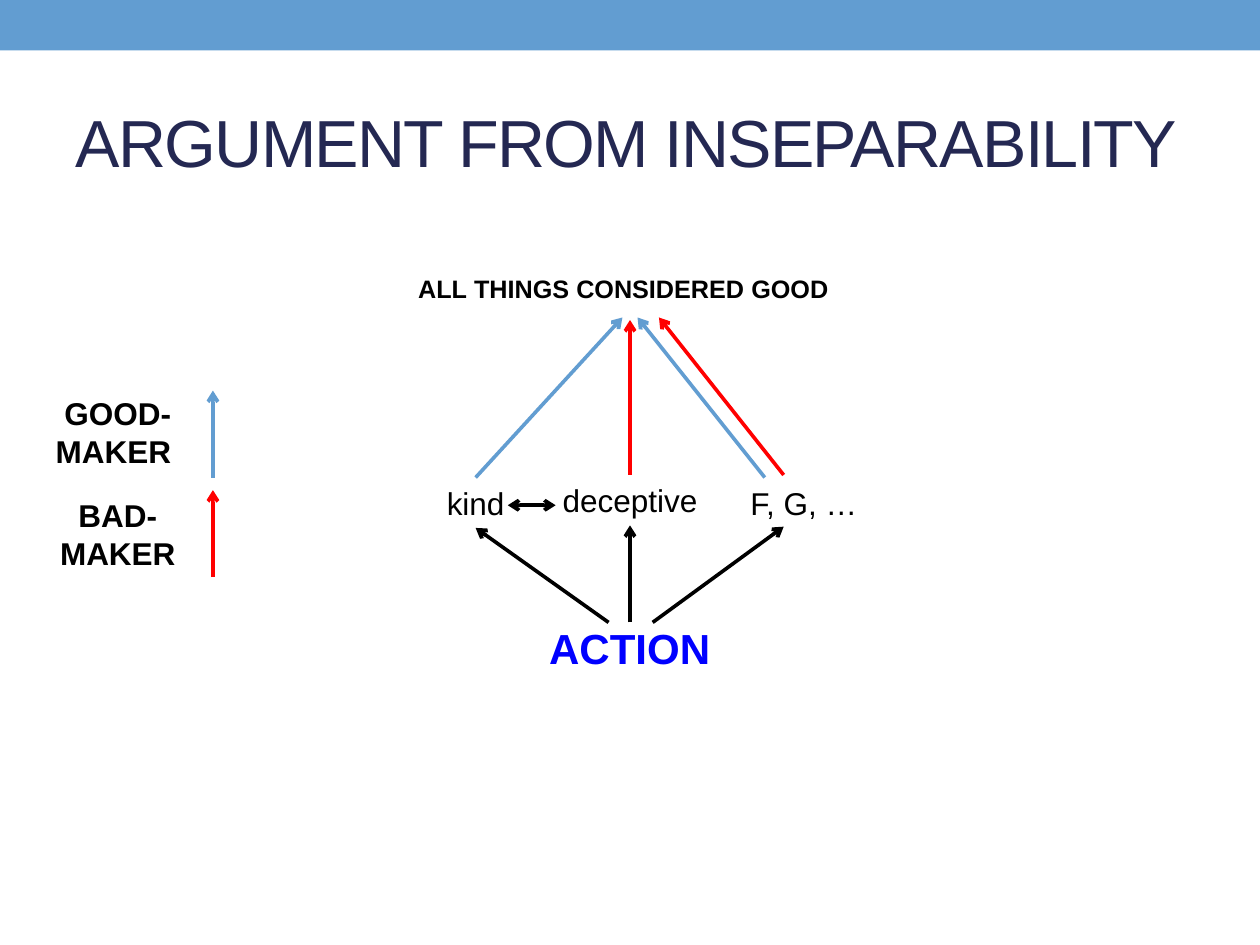
from dataclasses import dataclass
from typing import Optional

from lxml.etree import SubElement
from pptx import Presentation
from pptx.dml.color import RGBColor
from pptx.enum.shapes import MSO_CONNECTOR, MSO_SHAPE
from pptx.enum.text import MSO_ANCHOR, MSO_AUTO_SIZE, PP_ALIGN
from pptx.oxml.ns import qn
from pptx.util import Inches, Pt

# The slide is a grid of 100 columns by 75 rows
COLUMNS, ROWS = 100, 75
WIDTH, HEIGHT = Inches(10), Inches(7.5)
BLACK, BLUE, RED, NAVY, LINK_BLUE = "000000", "629DD1", "FF0000", "242852", "0000FF"
TOP, BOTTOM = 0, 2


@dataclass
class Label:
    text: str
    box: tuple  # column, row, columns wide, rows high
    size: int = 18
    color: str = BLACK
    bold: bool = True
    centered: bool = True
    wrap: bool = True
    small_caps: bool = False


@dataclass
class Arrow:
    start: tuple  # column, row
    end: tuple
    color: str = BLACK
    both_ways: bool = False
    start_join: Optional[tuple] = None  # label text, side
    end_join: Optional[tuple] = None


LABELS = [
    Label("kind", (34.4, 37.9, 6.7, 4), bold=False, wrap=False),
    Label("deceptive", (43.6, 37.7, 12.8, 4), bold=False, wrap=False),
    Label("F, G, …", (58.5, 37.9, 10.6, 4), bold=False, wrap=False),
    Label("all things considered good", (32.2, 20.7, 35.5, 4), centered=False, small_caps=True),
    Label("ACTION", (42.6, 48.9, 15.9, 5), size=24, color=LINK_BLUE, centered=False),
    Label("GOOD-MAKER ", (1.8, 30.8, 15.1, 7.1)),
    Label("BAD-MAKER", (1.8, 38.9, 15.1, 7.1)),
]

ARROWS = [
    # Action to its features
    Arrow((48.3, 49.4), (37.7, 41.8), end_join=("kind", BOTTOM)),
    Arrow((50, 49.4), (50, 41.8), end_join=("deceptive", BOTTOM)),
    Arrow((51.8, 49.4), (62.2, 41.8)),
    # Between features
    Arrow((40.3, 40.1), (44.1, 40.1), both_ways=True),
    # Features to the verdict
    Arrow((37.7, 37.9), (49.4, 25.2), BLUE, start_join=("kind", TOP)),
    Arrow((50, 37.9), (50, 25.4), RED, start_join=("deceptive", TOP)),
    Arrow((60.7, 37.9), (50.6, 25.2), BLUE),
    Arrow((62.2, 37.7), (52.3, 25.2), RED),
    # Legend
    Arrow((16.9, 37.9), (16.9, 31), BLUE),
    Arrow((16.9, 45.8), (16.9, 38.9), RED),
]


def rgb(color: str) -> RGBColor:
    return RGBColor.from_string(color)


def grid(*lengths: float) -> list:
    """Turn alternating columns and rows into slide lengths."""
    units = (WIDTH / COLUMNS, HEIGHT / ROWS)
    return [round(length * units[index % 2]) for index, length in enumerate(lengths)]


def set_attributes(target, values: dict) -> None:
    for name, value in values.items():
        setattr(target, name, value)


def format_run(run, size: int, color: str, bold: bool = False) -> None:
    set_attributes(run.font, {"name": "Arial", "size": Pt(size), "bold": bold})
    run.font.color.rgb = rgb(color)


def add_band(slide) -> None:
    band = slide.shapes.add_shape(MSO_SHAPE.RECTANGLE, *grid(0, 0, COLUMNS, 4))
    band.shadow.inherit = False
    band.fill.solid()
    band.fill.fore_color.rgb = rgb(BLUE)
    band.line.fill.background()


def format_title(slide, text: str) -> None:
    title = slide.shapes.title
    left, top, width, height = grid(5, 5.8, 90, 10.8)
    set_attributes(title, {"left": left, "top": top, "width": width, "height": height})
    set_attributes(title.text_frame, {
        "vertical_anchor": MSO_ANCHOR.MIDDLE, "word_wrap": True, "auto_size": MSO_AUTO_SIZE.NONE})
    paragraph = title.text_frame.paragraphs[0]
    paragraph.alignment = PP_ALIGN.LEFT
    run = paragraph.add_run()
    run.text = text
    format_run(run, 38, NAVY)
    run.font._element.set("spc", "-100")


def add_label(slide, label: Label):
    shape = slide.shapes.add_textbox(*grid(*label.box))
    set_attributes(shape.text_frame, {
        "word_wrap": label.wrap, "auto_size": MSO_AUTO_SIZE.SHAPE_TO_FIT_TEXT})
    paragraph = shape.text_frame.paragraphs[0]
    paragraph.alignment = PP_ALIGN.CENTER if label.centered else PP_ALIGN.LEFT
    run = paragraph.add_run()
    run.text = label.text
    format_run(run, label.size, label.color, label.bold)
    if label.small_caps:
        run.font._element.set("cap", "small")
    return shape


def add_arrow(slide, arrow: Arrow, shapes: dict) -> None:
    connector = slide.shapes.add_connector(
        MSO_CONNECTOR.STRAIGHT, *grid(*arrow.start, *arrow.end))
    if arrow.start_join:
        name, side = arrow.start_join
        connector.begin_connect(shapes[name], side)
    if arrow.end_join:
        name, side = arrow.end_join
        connector.end_connect(shapes[name], side)
    connector.line.color.rgb = rgb(arrow.color)
    connector.line.width = Pt(2.08)
    # Arrowheads, and no shadow
    line = connector.line._get_or_add_ln()
    for end in ("a:headEnd", "a:tailEnd") if arrow.both_ways else ("a:tailEnd",):
        SubElement(line, qn(end), type="arrow")
    SubElement(connector._element.spPr, qn("a:effectLst"))


def main() -> None:
    presentation = Presentation()
    set_attributes(presentation, {"slide_width": WIDTH, "slide_height": HEIGHT})
    slide = presentation.slides.add_slide(presentation.slide_layouts[5])
    add_band(slide)
    format_title(slide, "ARGUMENT FROM INSEPARABILITY")
    shapes = {label.text: add_label(slide, label) for label in LABELS}
    for arrow in ARROWS:
        add_arrow(slide, arrow, shapes)
    presentation.save("out.pptx")


if __name__ == "__main__":
    main()
